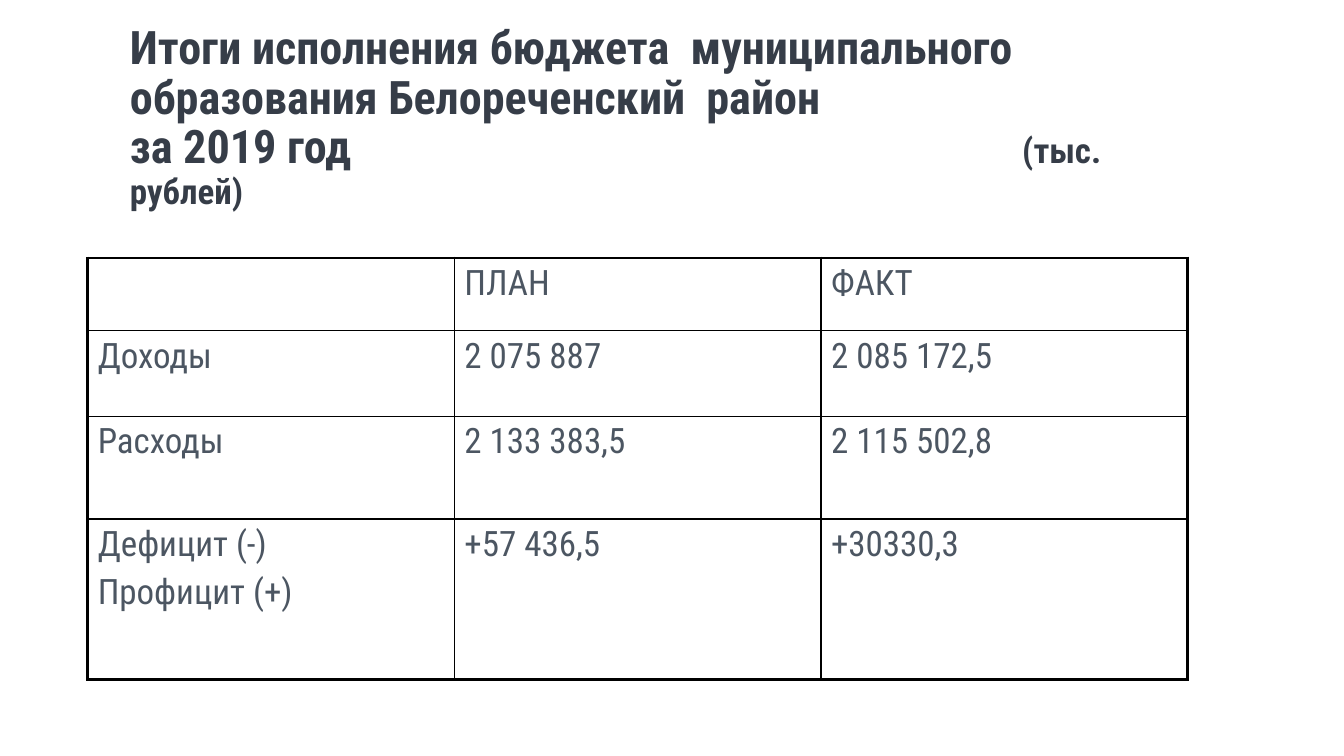
from lxml import etree
from pptx import Presentation
from pptx.dml.color import RGBColor
from pptx.enum.text import MSO_ANCHOR
from pptx.oxml.ns import qn
from pptx.util import Inches, Pt

MIDDLE = MSO_ANCHOR.MIDDLE

THEME = {
    "title": {"name": "Roboto Condensed", "size": Pt(33), "bold": True},
    "unit": {"name": "Roboto Condensed", "size": Pt(25), "bold": True},
    "cell": {"name": "Roboto Condensed", "size": Pt(25), "bold": False},
    "title_color": RGBColor.from_string("363D48"),
    "cell_color": RGBColor.from_string("4C5662"),
    "border_color": "000000",
    "outer_border": Pt(2.25),
    "inner_border": Pt(1),
}


def style_font(font, role, color):
    for attribute, value in THEME[role].items():
        setattr(font, attribute, value)
    font.color.rgb = THEME[color]


def add_border(cell, side, width):
    line = etree.SubElement(cell._tc.get_or_add_tcPr(), qn(f"a:ln{side}"), w=str(width))
    fill = etree.SubElement(line, qn("a:solidFill"))
    etree.SubElement(fill, qn("a:srgbClr"), val=THEME["border_color"])


presentation = Presentation()
presentation.slide_width = Inches(13.33)
presentation.slide_height = Inches(7.5)
slide = presentation.slides.add_slide(presentation.slide_layouts[6])

# Heading, with the unit of measure set off by a tab stop
heading = slide.shapes.add_textbox(Inches(1.19), Inches(0.42), Inches(9.98), Inches(1.5)).text_frame
heading.word_wrap = True
heading.vertical_anchor = MIDDLE
heading_line = heading.paragraphs[0]
tab_stops = etree.SubElement(heading_line._p.get_or_add_pPr(), qn("a:tabLst"))
etree.SubElement(tab_stops, qn("a:tab"), pos=str(Inches(8.85)), algn="l")
heading_line.line_spacing = 0.9

heading_parts = [
    ("title", "Итоги исполнения бюджета  муниципального  образования Белореченский  район"),
    ("title", "за 2019 год\t"),
    ("unit", "(тыс. рублей)"),
]
for index, (role, wording) in enumerate(heading_parts):
    if index == 1:
        heading_line.add_line_break()
    run = heading_line.add_run()
    run.text = wording
    style_font(run.font, role, "title_color")

# Budget table
budget_rows = [
    (0.72, ["", "ПЛАН", "ФАКТ"]),
    (0.85, ["Доходы", "2 075 887", "2 085 172,5"]),
    (1.02, ["Расходы", "2 133 383,5", "2 115 502,8"]),
    (1.59, ["Дефицит (-)\nПрофицит (+)", "+57 436,5", "+30330,3"]),
]
last_row, last_column = len(budget_rows) - 1, 2
budget = slide.shapes.add_table(
    len(budget_rows), 3, Inches(0.87), Inches(2.56), Inches(10.91), Inches(4.18)
).table
budget.first_row = False
budget.horz_banding = False

for row, (height, values) in enumerate(budget_rows):
    budget.rows[row].height = Inches(height)
    for column, value in enumerate(values):
        cell = budget.cell(row, column)
        cell.text = value
        for index, paragraph in enumerate(cell.text_frame.paragraphs):
            if index:
                paragraph.space_before = Pt(5)
            style_font(paragraph.font, "cell", "cell_color")
            for run in paragraph.runs:
                style_font(run.font, "cell", "cell_color")

        # Heavy frame outside, thin rules inside
        on_edge = {
            "L": column == 0,
            "R": column == last_column,
            "T": row == 0,
            "B": row == last_row,
        }
        for side, outer in on_edge.items():
            add_border(cell, side, THEME["outer_border" if outer else "inner_border"])
        cell.fill.background()

presentation.save("out.pptx")
